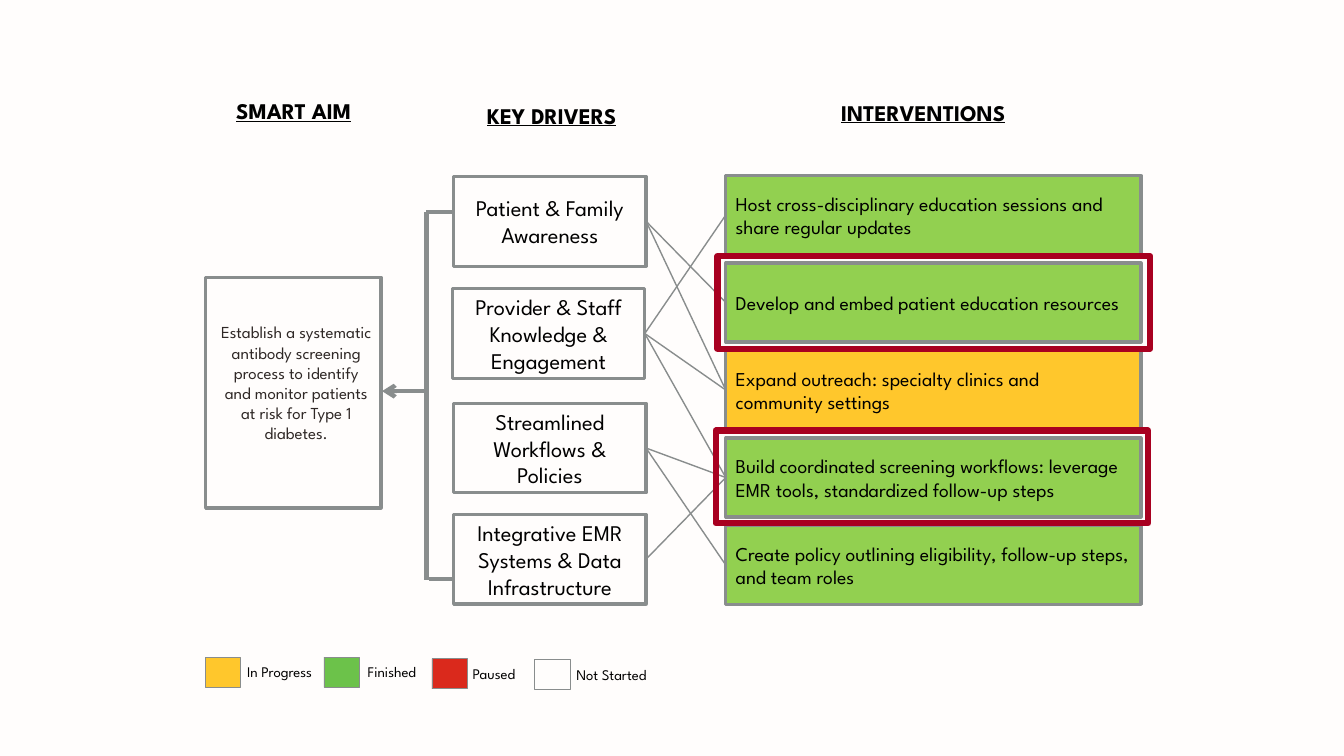
from lxml import etree
from pptx import Presentation
from pptx.dml.color import RGBColor
from pptx.enum.shapes import MSO_CONNECTOR, MSO_SHAPE
from pptx.enum.text import MSO_ANCHOR, PP_ALIGN
from pptx.oxml.ns import qn
from pptx.util import Pt

RECT = MSO_SHAPE.RECTANGLE
STRAIGHT = MSO_CONNECTOR.STRAIGHT
LEFT, CENTER = PP_ALIGN.LEFT, PP_ALIGN.CENTER
TOP, MIDDLE = MSO_ANCHOR.TOP, MSO_ANCHOR.MIDDLE
LEFT_SITE, RIGHT_SITE = 1, 3  # connection sites of a rectangle


class Theme:
    font = "League Spartan"
    background = RGBColor.from_string("FFFDFC")
    gray = RGBColor.from_string("898D8D")
    black = RGBColor.from_string("000000")
    aim_text = RGBColor.from_string("2F2826")
    green = RGBColor.from_string("92D050")
    amber = RGBColor.from_string("FFC72C")
    legend_green = RGBColor.from_string("6CC24A")
    legend_red = RGBColor.from_string("DA291C")
    highlight = RGBColor.from_string("A80020")
    heading_size = driver_size = 16
    intervention_size = 14
    aim_size = 12
    legend_size = 10.5


prs = Presentation()
prs.slide_width, prs.slide_height = Pt(960), Pt(540)
s = prs.slides.add_slide(prs.slide_layouts[6])
s.background.fill.solid()
s.background.fill.fore_color.rgb = Theme.background


def add_box(x, y, w, h, text="", *, fill=None, line=None, line_width=2.25,
            size=12, color=Theme.black, align=CENTER, anchor=MIDDLE,
            heading=False, wrap=True):
    """Add a rectangle, or a plain text box when no line colour is given."""
    place = Pt(x), Pt(y), Pt(w), Pt(h)
    if line is None:
        sp = s.shapes.add_textbox(*place)
    else:
        sp = s.shapes.add_shape(RECT, *place)
        sp.shadow.inherit = False
        sp.line.color.rgb = line
        sp.line.width = Pt(line_width)
        if fill is None:
            sp.fill.background()
        else:
            sp.fill.solid()
            sp.fill.fore_color.rgb = fill
    if text:
        tf = sp.text_frame
        tf.word_wrap = wrap
        tf.vertical_anchor = anchor
        p = tf.paragraphs[0]
        p.alignment = align
        r = p.add_run()
        r.text = text
        r.font.name = Theme.font
        r.font.size = Pt(size)
        r.font.color.rgb = color
        r.font.bold = r.font.underline = heading
    return sp


def add_line(x1, y1, x2, y2, width):
    line = s.shapes.add_connector(STRAIGHT, Pt(x1), Pt(y1), Pt(x2), Pt(y2))
    line.line.color.rgb = Theme.gray
    line.line.width = Pt(width)
    etree.SubElement(line._element.spPr, qn("a:effectLst"))
    return line


# Column headings
for x, y, w, text in [
    (136.8, 66.2, 146.2, "SMART AIM"),
    (310.3, 69.1, 167.8, "KEY DRIVERS"),
    (551.5, 67, 216, "INTERVENTIONS"),
]:
    add_box(x, y, w, 26.6, text, size=Theme.heading_size, anchor=TOP, heading=True)

# Bracket from the drivers to the aim
trunk_x, top_y, bottom_y, driver_x = 304.6, 151.2, 413.3, 324
add_line(trunk_x, top_y, driver_x, top_y, 3)
add_line(trunk_x + 2, bottom_y, driver_x, bottom_y, 3)
add_line(trunk_x, top_y, trunk_x, bottom_y + 0.7, 3)
arrow = add_line(trunk_x, 279.4, 272.9, 279.4, 3)
etree.SubElement(arrow.line._get_or_add_ln(), qn("a:tailEnd"), type="arrow")

aim = add_box(146.9, 198, 125.3, 164.9,
              "Establish a systematic antibody screening process to identify "
              "and monitor patients at risk for Type 1 diabetes.",
              line=Theme.gray, size=Theme.aim_size, color=Theme.aim_text)
tf = aim.text_frame
tf.margin_left, tf.margin_right = Pt(10.8), Pt(6.5)
tf.margin_top, tf.margin_bottom = Pt(3), Pt(17.4)

drivers = [
    add_box(x, y, 137.5, 64.1, text, fill=Theme.background, line=Theme.gray,
            size=Theme.driver_size)
    for x, y, text in [
        (driver_x, 126, "Patient & Family Awareness"),
        (driver_x - 0.9, 206.2, "Provider & Staff Knowledge & Engagement"),
        (driver_x, 288, "Streamlined Workflows & Policies"),
        (driver_x, 367.4, "Integrative EMR Systems & Data Infrastructure"),
    ]
]

interventions = [
    add_box(518.4, 125.4 + 62.5 * i, 296.6, 56.4, text, fill=fill,
            line=Theme.gray, size=Theme.intervention_size, align=LEFT)
    for i, (text, fill) in enumerate([
        ("Host cross-disciplinary education sessions and share regular updates",
         Theme.green),
        ("Develop and embed patient education resources", Theme.green),
        ("Expand outreach: specialty clinics and community settings", Theme.amber),
        ("Build coordinated screening workflows: leverage EMR tools, "
         "standardized follow-up steps", Theme.green),
        ("Create policy outlining eligibility, follow-up steps, and team roles",
         Theme.green),
    ])
]

# Which driver feeds which intervention
for driver, intervention in [(0, 1), (0, 2), (1, 0), (1, 2), (1, 3),
                             (2, 3), (2, 4), (3, 3)]:
    link = add_line(0, 0, 0, 0, 1)
    link.begin_connect(drivers[driver], RIGHT_SITE)
    link.end_connect(interventions[intervention], LEFT_SITE)

# Highlight frames
for x, y in [(512.6, 182.9), (511.2, 307.6)]:
    add_box(x, y, 308.9, 66.2, line=Theme.highlight, line_width=4.5)

# Status legend
for x, y, fill, label_x, label_w, label in [
    (146.5, 469.4, Theme.amber, 169.4, 68.4, "In Progress"),
    (231.4, 469.4, Theme.legend_green, 255.6, 55.4, "Finished"),
    (308.5, 470.5, Theme.legend_red, 330.6, 52.6, "Paused"),
    (382, 471.2, Theme.background, 404.6, 72.7, "Not Started"),
]:
    add_box(x, y, 25.2, 21.6, fill=fill, line=Theme.gray, line_width=0.5)
    add_box(label_x, y + 0.7, label_w, 20.2, label, size=Theme.legend_size,
            align=LEFT, anchor=TOP, wrap=False)

prs.save("out.pptx")
